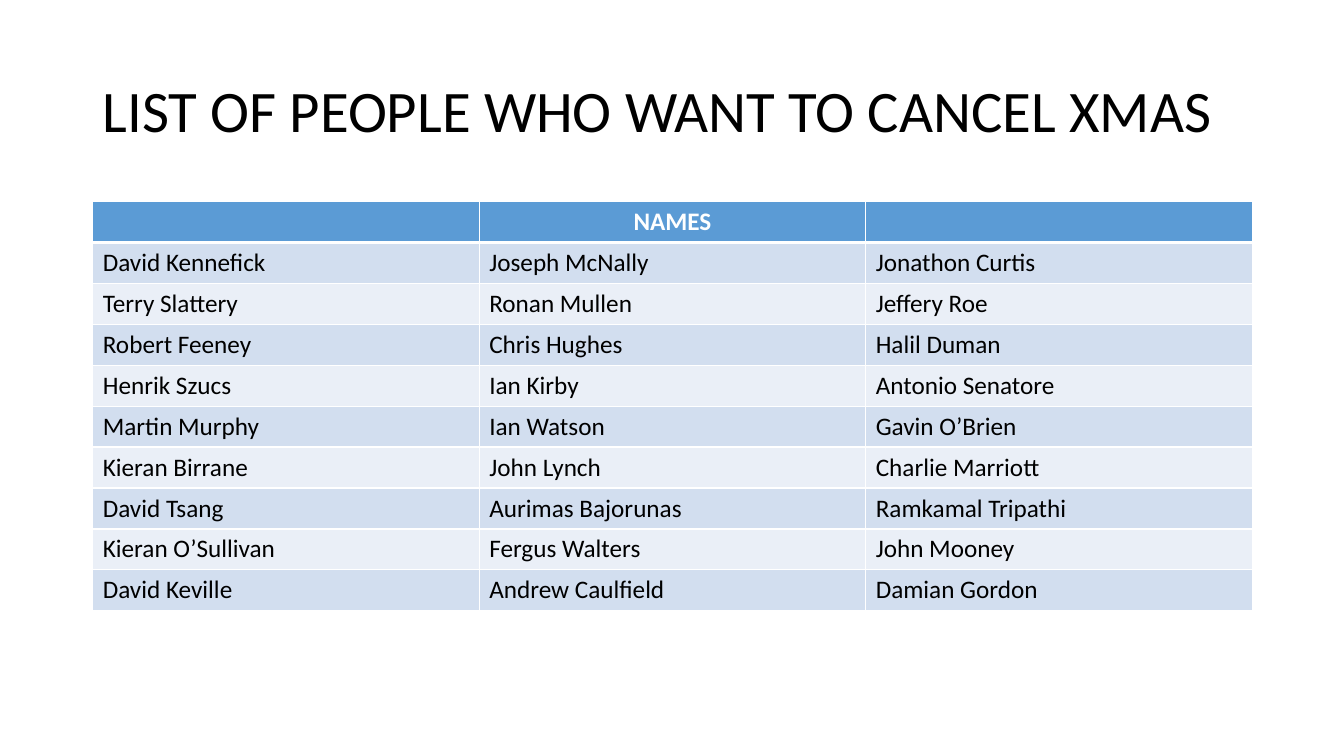
from lxml import etree
from pptx import Presentation
from pptx.dml.color import RGBColor
from pptx.enum import text
from pptx.oxml import ns
from pptx.util import Inches, Pt

TITLE = "LIST OF PEOPLE WHO WANT TO CANCEL XMAS"
ROWS = [
    ("", "NAMES", ""),
    ("David Kennefick", "Joseph McNally", "Jonathon Curtis"),
    ("Terry Slattery", "Ronan Mullen", "Jeffery Roe"),
    ("Robert Feeney", "Chris Hughes", "Halil Duman"),
    ("Henrik Szucs", "Ian Kirby", "Antonio Senatore"),
    ("Martin Murphy", "Ian Watson", "Gavin O’Brien"),
    ("Kieran Birrane", "John Lynch", "Charlie Marriott"),
    ("David Tsang", "Aurimas Bajorunas", "Ramkamal Tripathi"),
    ("Kieran O’Sullivan", "Fergus Walters", "John Mooney"),
    ("David Keville", "Andrew Caulfield", "Damian Gordon"),
]
COLORS = {"text": "000000", "header": "5B9BD5", "header_text": "FFFFFF",
          "odd_row": "D2DEEF", "even_row": "EAEFF7", "border": "FFFFFF"}
LEFT, WIDTH = 0.92, 11.5
TITLE_TOP, TITLE_HEIGHT = 0.4, 1.45
TABLE_TOP, TABLE_HEIGHT = 2, 4.06


def write(paragraph, words, size, color, bold=False):
    paragraph.text = words
    for name, value in {"name": "Calibri", "size": Pt(size), "bold": bold}.items():
        setattr(paragraph.font, name, value)
    paragraph.font.color.rgb = RGBColor.from_string(COLORS[color])


def add_borders(cell, widths):
    """Draw cell borders; widths maps a side (L, R, T, B) to points."""
    properties = cell._tc.get_or_add_tcPr()
    for side, width in widths.items():
        line = etree.SubElement(properties, ns.qn(f"a:ln{side}"), w=str(Pt(width)))
        fill = etree.SubElement(line, ns.qn("a:solidFill"))
        etree.SubElement(fill, ns.qn("a:srgbClr"), val=COLORS["border"])


def add_title(slide):
    box = slide.shapes.add_textbox(Inches(LEFT), Inches(TITLE_TOP),
                                   Inches(WIDTH), Inches(TITLE_HEIGHT))
    frame = box.text_frame
    frame.word_wrap = True
    frame.vertical_anchor = text.MSO_ANCHOR.MIDDLE
    frame.paragraphs[0].line_spacing = 0.9
    write(frame.paragraphs[0], TITLE, 42, "text")


def add_names(slide):
    table = slide.shapes.add_table(len(ROWS), len(ROWS[0]), Inches(LEFT), Inches(TABLE_TOP),
                                   Inches(WIDTH), Inches(TABLE_HEIGHT)).table
    for row, names in enumerate(ROWS):
        header = row == 0
        fill = "header" if header else "odd_row" if row % 2 else "even_row"
        widths = {"L": 1, "R": 1, "T": 3 if row == 1 else 1, "B": 3 if header else 1}
        for column, name in enumerate(names):
            cell = table.cell(row, column)
            add_borders(cell, widths)
            cell.fill.solid()
            cell.fill.fore_color.rgb = RGBColor.from_string(COLORS[fill])
            paragraph = cell.text_frame.paragraphs[0]
            write(paragraph, name, 18, "header_text" if header else "text", header)
            if header:
                paragraph.alignment = text.PP_ALIGN.CENTER


def main():
    presentation = Presentation()
    presentation.slide_width = Inches(13.33)
    presentation.slide_height = Inches(7.5)
    slide = presentation.slides.add_slide(presentation.slide_layouts[6])
    add_title(slide)
    add_names(slide)
    presentation.save("out.pptx")


if __name__ == "__main__":
    main()
